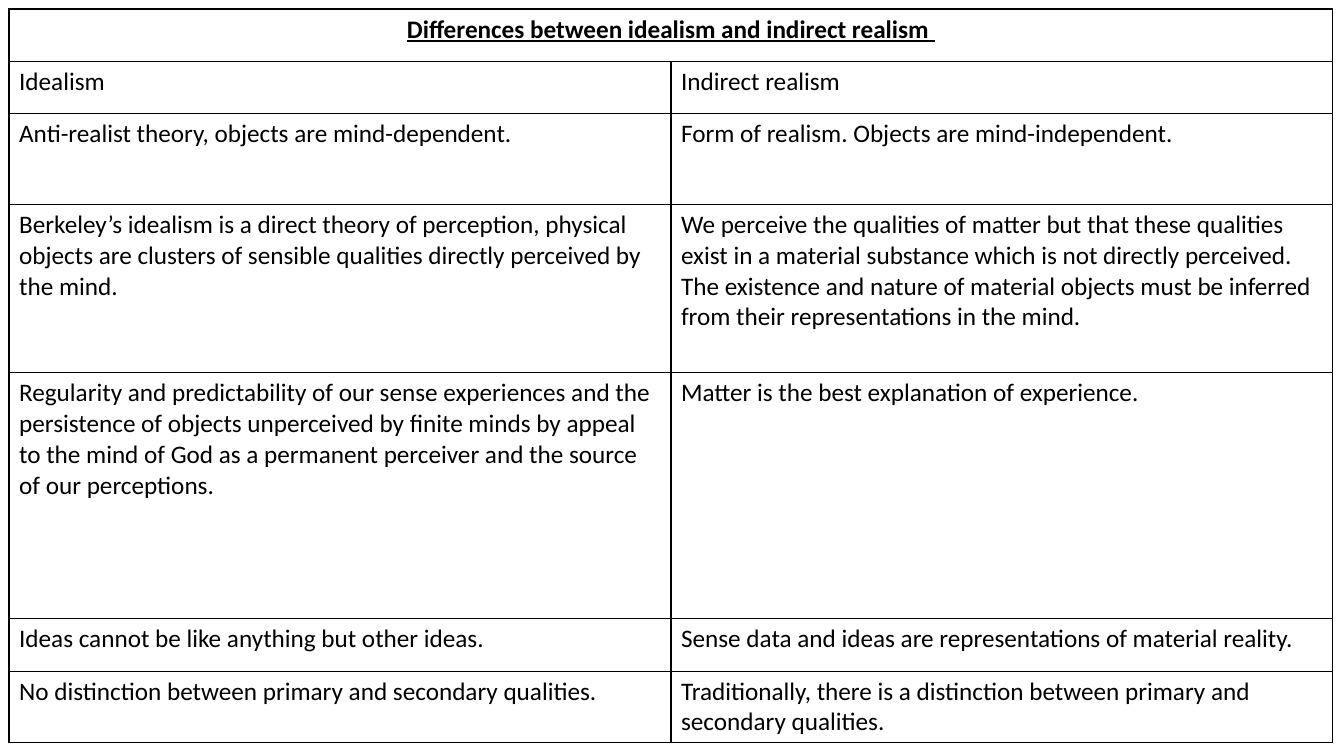
from lxml import etree
from pptx import Presentation
from pptx.dml.color import RGBColor
from pptx.enum.text import MSO_ANCHOR, PP_ALIGN
from pptx.oxml.ns import qn
from pptx.util import Pt

LEFT, CENTER = PP_ALIGN.LEFT, PP_ALIGN.CENTER
TOP = MSO_ANCHOR.TOP

TITLE = "Differences between idealism and indirect realism "
COMPARISON = [
    (37.44, "Idealism", "Indirect realism"),
    (64.8, "Anti-realist theory, objects are mind-dependent.",
     "Form of realism. Objects are mind-independent."),
    (120.24, "Berkeley’s idealism is a direct theory of perception, physical objects "
     "are clusters of sensible qualities directly perceived by the mind.",
     "We perceive the qualities of matter but that these qualities exist in a "
     "material substance which is not directly perceived. The existence and nature "
     "of material objects must be inferred from their representations in the mind."),
    (175.68, "Regularity and predictability of our sense experiences and the "
     "persistence of objects unperceived by finite minds by appeal to the mind of "
     "God as a permanent perceiver and the source of our perceptions.",
     "Matter is the best explanation of experience."),
    (37.44, "Ideas cannot be like anything but other ideas.",
     "Sense data and ideas are representations of material reality."),
    (50.4, "No distinction between primary and secondary qualities.",
     "Traditionally, there is a distinction between primary and secondary qualities."),
]


def rgb(value):
    return RGBColor.from_string(value)


class SlideBuilder:
    font = {"name": "Calibri", "size": Pt(18), "bold": False, "underline": False}
    heading = {"bold": True, "underline": True}
    ink = "000000"
    paper = "FFFFFF"
    border = Pt(1)

    def __init__(self, prs):
        self.s = prs.slides.add_slide(prs.slide_layouts[6])

    def text(self, cell, content, align=LEFT, **changes):
        cell.vertical_anchor = TOP
        p = cell.text_frame.paragraphs[0]
        p.alignment = align
        r = p.add_run()
        r.text = content
        for name, value in {**self.font, **changes}.items():
            setattr(r.font, name, value)
        r.font.color.rgb = rgb(self.ink)

    def frame(self, cell):
        cell.fill.solid()
        cell.fill.fore_color.rgb = rgb(self.paper)
        tcPr = cell._tc.get_or_add_tcPr()
        for i, side in enumerate(("lnL", "lnR", "lnT", "lnB")):
            ln = etree.Element(qn(f"a:{side}"), w=str(self.border))
            fill = etree.SubElement(ln, qn("a:solidFill"))
            etree.SubElement(fill, qn("a:srgbClr"), val=self.ink)
            tcPr.insert(i, ln)

    def table(self, left, top, col_width, title, title_height, rows):
        heights = [title_height] + [row[0] for row in rows]
        sp = self.s.shapes.add_table(len(heights), 2, Pt(left), Pt(top),
                                     Pt(2 * col_width), Pt(sum(heights)))
        table = sp.table
        table.first_row = table.horz_banding = False
        for column in table.columns:
            column.width = Pt(col_width)
        for row, height in zip(table.rows, heights):
            row.height = Pt(height)
            for cell in row.cells:
                self.frame(cell)
        table.cell(0, 0).merge(table.cell(0, 1))
        self.text(table.cell(0, 0), title, CENTER, **self.heading)
        for i, (_, *contents) in enumerate(rows, 1):
            for j, content in enumerate(contents):
                self.text(table.cell(i, j), content)


def main():
    prs = Presentation()
    prs.slide_width, prs.slide_height = Pt(960), Pt(540)
    SlideBuilder(prs).table(6.5, 6.5, 472.8, TITLE, 37.44, COMPARISON)
    prs.save("out.pptx")


if __name__ == "__main__":
    main()
